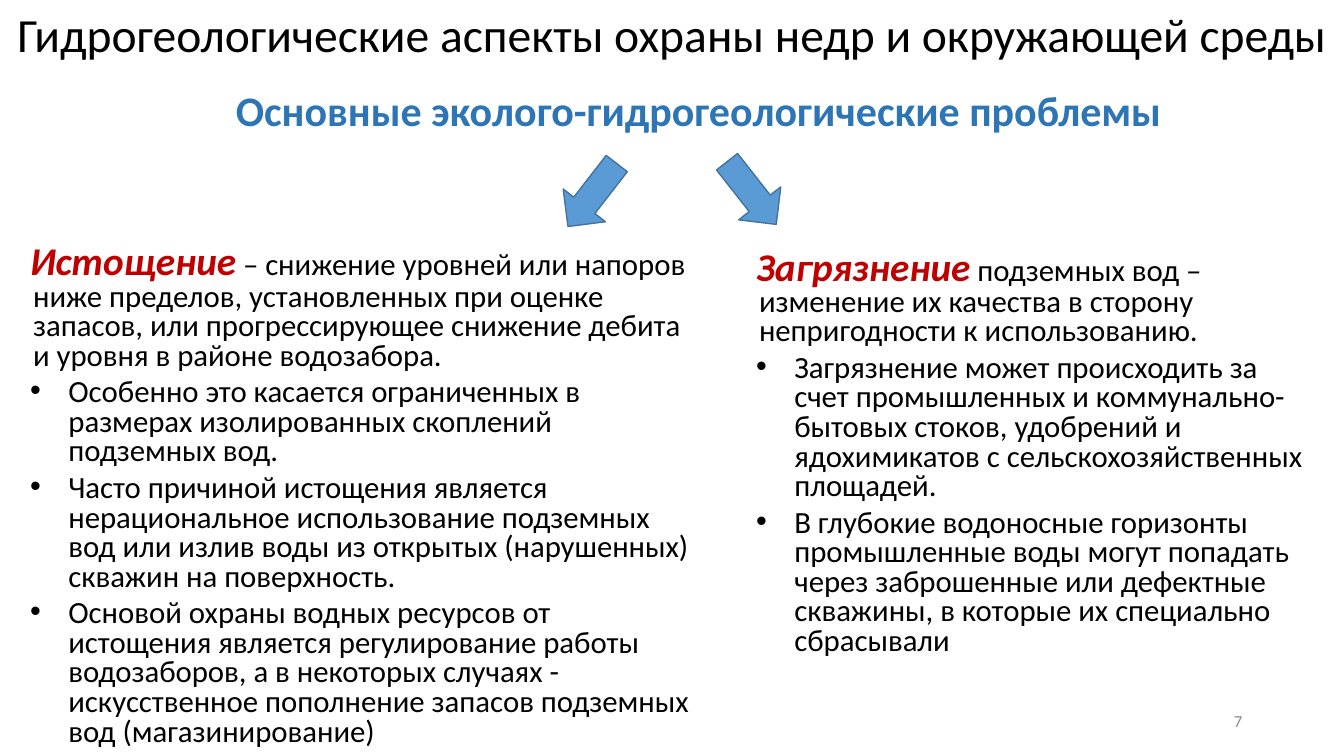
from lxml import etree
from pptx import Presentation
from pptx.dml.color import RGBColor
from pptx.enum.shapes import MSO_SHAPE
from pptx.enum.text import MSO_ANCHOR, MSO_AUTO_SIZE, PP_ALIGN
from pptx.oxml.ns import qn
from pptx.util import Emu, Pt

PX = 9144  # 100 px to the inch
FONT = "Calibri"
BLACK, RED, BLUE, GREY = "000000", "C00000", "2E75B6", "8C8C8C"
ARROW_FILL, ARROW_LINE = "5B9BD5", "43739E"
DOWN_ARROW = MSO_SHAPE.DOWN_ARROW
LEFT, CENTER, RIGHT = PP_ALIGN.LEFT, PP_ALIGN.CENTER, PP_ALIGN.RIGHT
TOP, MIDDLE = MSO_ANCHOR.TOP, MSO_ANCHOR.MIDDLE
GROW, FIXED = MSO_AUTO_SIZE.SHAPE_TO_FIT_TEXT, MSO_AUTO_SIZE.NONE

DEPLETION = (
    "Истощение",
    " – снижение уровней или напоров ниже пределов, установленных при оценке "
    "запасов, или прогрессирующее снижение дебита и уровня в районе водозабора.",
    [
        "Особенно это касается ограниченных в размерах изолированных скоплений "
        "подземных вод.",
        "Часто причиной истощения является нерациональное использование подземных "
        "вод или излив воды из открытых (нарушенных) скважин на поверхность.",
        "Основой охраны водных ресурсов от истощения является регулирование работы "
        "водозаборов, а в некоторых случаях - искусственное пополнение запасов "
        "подземных вод (магазинирование)",
    ],
)
POLLUTION = (
    "Загрязнение",
    " подземных вод – изменение их качества в сторону непригодности к использованию.",
    [
        "Загрязнение может происходить за счет промышленных и коммунально-бытовых "
        "стоков, удобрений и ядохимикатов с сельскохозяйственных площадей.",
        "В глубокие водоносные горизонты промышленные воды могут попадать через "
        "заброшенные или дефектные скважины, в которые их специально сбрасывали",
    ],
)


def px(length):
    return Emu(length * PX)


def color(value):
    return RGBColor.from_string(value)


def style(font, size, ink, bold=False, italic=False):
    font.name = FONT
    font.size = Pt(size)
    font.color.rgb = color(ink)
    font.bold = bold
    font.italic = italic


def add_frame(slide, box, wrap=True, fit=GROW, anchor=TOP):
    frame = slide.shapes.add_textbox(*map(px, box)).text_frame
    frame.word_wrap = wrap
    frame.auto_size = fit
    frame.vertical_anchor = anchor
    return frame


def add_label(slide, box, text, size, ink, align=LEFT, bold=False, **frame_options):
    label = add_frame(slide, box, **frame_options).paragraphs[0]
    label.text = text
    label.alignment = align
    style(label.font, size, ink, bold)


def set_hanging(paragraph, indent):
    properties = paragraph._p.get_or_add_pPr()
    properties.set("marL", str(px(indent)))
    properties.set("indent", str(-px(indent)))
    paragraph.line_spacing = 0.8
    return properties


def add_problem(slide, box, term, definition, details):
    frame = add_frame(slide, box)

    # Term with its definition
    lead = frame.paragraphs[0]
    set_hanging(lead, 3)
    for text, look in ((term, (28, RED, True, True)), (definition, (22, BLACK))):
        run = lead.add_run()
        run.text = text
        style(run.font, *look)

    # Bulleted details
    for text in details:
        detail = frame.add_paragraph()
        detail.text = text
        properties = set_hanging(detail, 38)
        detail.space_before = Pt(5)
        etree.SubElement(properties, qn("a:buFont")).set("typeface", "Arial")
        etree.SubElement(properties, qn("a:buChar")).set("char", "•")
        style(detail.font, 22, BLACK)


def add_arrow(slide, left, top, rotation):
    arrow = slide.shapes.add_shape(DOWN_ARROW, px(left), px(top), px(53), px(79))
    arrow.rotation = rotation
    arrow.shadow.inherit = False
    arrow.fill.solid()
    arrow.fill.fore_color.rgb = color(ARROW_FILL)
    arrow.line.color.rgb = color(ARROW_LINE)
    arrow.line.width = Pt(1)


def main():
    deck = Presentation()
    deck.slide_width, deck.slide_height = px(1333), px(750)
    slide = deck.slides.add_slide(deck.slide_layouts[6])

    # Title and subtitle
    add_label(slide, (0, 0, 1333, 67),
              "Гидрогеологические аспекты охраны недр и окружающей среды",
              34, BLACK, CENTER)
    add_label(slide, (224, 79, 956, 61),
              "Основные эколого-гидрогеологические проблемы",
              30, BLUE, bold=True, wrap=False)

    # Arrows to the two problems
    add_arrow(slide, 561, 154, 37.8)
    add_arrow(slide, 719, 152, 321.9)

    # Problem columns
    add_problem(slide, (20, 239, 681, 513), *DEPLETION)
    add_problem(slide, (740, 244, 578, 417), *POLLUTION)

    # Slide number
    add_label(slide, (942, 695, 300, 40), "7", 12, GREY, RIGHT,
              fit=FIXED, anchor=MIDDLE)

    deck.save("out.pptx")


if __name__ == "__main__":
    main()
